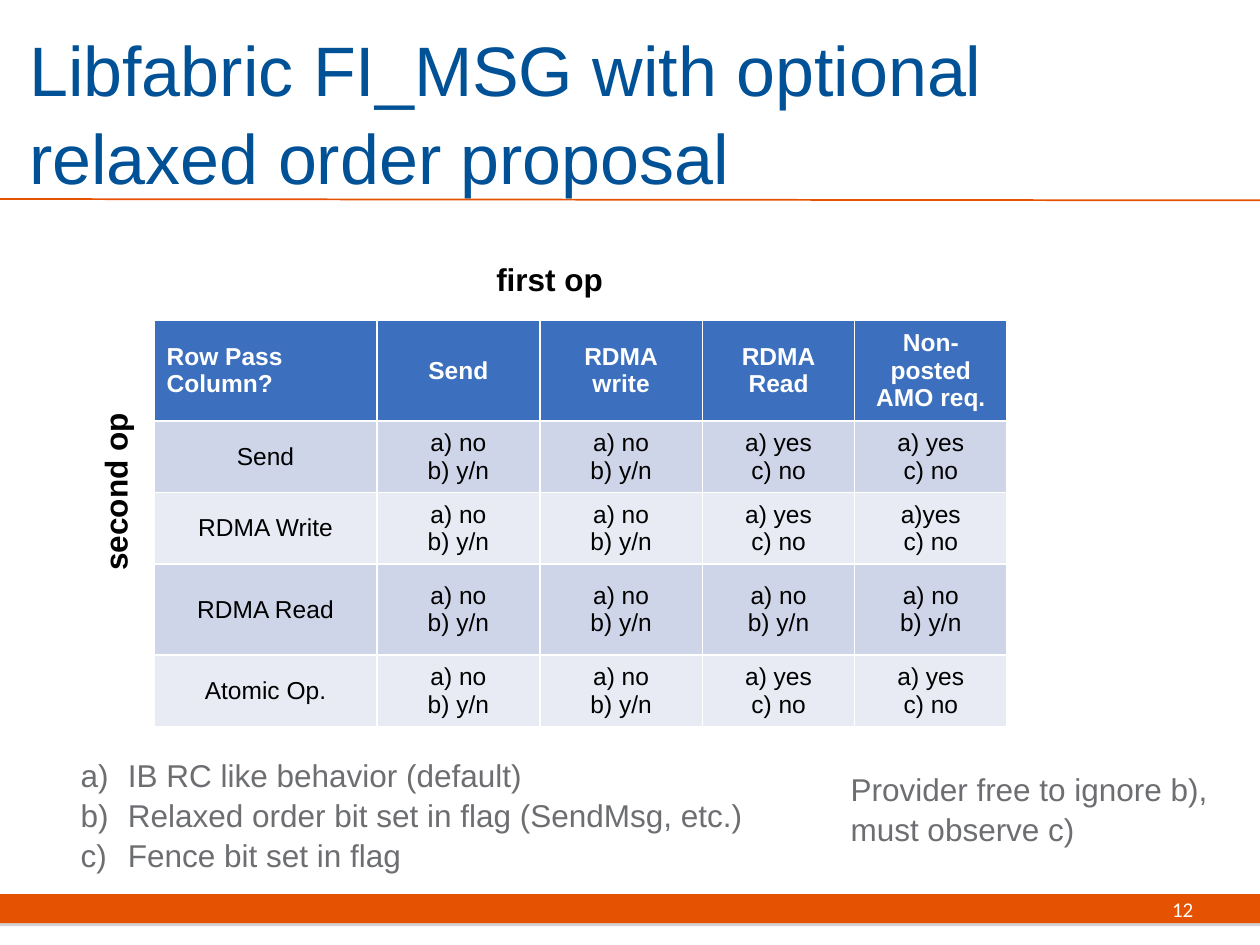
from dataclasses import dataclass

from lxml import etree
from pptx import Presentation
from pptx.dml.color import RGBColor
from pptx.enum.shapes import MSO_CONNECTOR, MSO_SHAPE
from pptx.enum.text import MSO_ANCHOR, MSO_AUTO_SIZE, PP_ALIGN
from pptx.oxml.ns import qn
from pptx.util import Pt

LEFT, CENTER, RIGHT = PP_ALIGN.LEFT, PP_ALIGN.CENTER, PP_ALIGN.RIGHT
TOP, MIDDLE = MSO_ANCHOR.TOP, MSO_ANCHOR.MIDDLE
NO_AUTOFIT = MSO_AUTO_SIZE.NONE
RECTANGLE, STRAIGHT = MSO_SHAPE.RECTANGLE, MSO_CONNECTOR.STRAIGHT
TITLE_ONLY = 5


@dataclass(frozen=True)
class Theme:
    accent: str = "E55302"
    title: str = "005195"
    body: str = "6D6E71"
    black: str = "000000"
    white: str = "FFFFFF"
    shadow: str = "808080"
    header: str = "3C6FBD"
    bands: tuple = ("CED5E8", "E8EBF4")
    font: str = "Arial"
    number_font: str = "Calibri"
    title_size: int = 40
    body_size: int = 18
    table_size: int = 14
    number_size: int = 12
    line_spacing: float = 1.05


THEME = Theme()
UNORDERED, FENCED = "a) no\nb) y/n", "a) yes\nc) no"
COLUMN_WIDTHS = (127.5, 93, 93, 87, 87)
ROW_HEIGHTS = (52, 37, 37, 52, 37)
ORDER_ROWS = (
    ("Row Pass Column?", "Send", "RDMA\nwrite", "RDMA\nRead", "Non-posted AMO req."),
    ("Send", UNORDERED, UNORDERED, FENCED, FENCED),
    ("RDMA Write", UNORDERED, UNORDERED, FENCED, "a)yes\nc) no"),
    ("RDMA Read", UNORDERED, UNORDERED, UNORDERED, UNORDERED),
    ("Atomic Op.", UNORDERED, UNORDERED, FENCED, FENCED),
)
BEHAVIORS = (
    "IB RC like behavior (default)",
    "Relaxed order bit set in flag (SendMsg, etc.)",
    "Fence bit set in flag",
)


def color(value):
    return RGBColor.from_string(value)


def points(box):
    return [Pt(length) for length in box]


def write(paragraph, text, size, ink, bold=False, align=LEFT, font=THEME.font):
    paragraph.alignment = align
    for index, line in enumerate(text.split("\n")):
        if index:
            paragraph.add_line_break()
        run = paragraph.add_run()
        run.text = line
        run.font.name = font
        run.font.size = Pt(size)
        run.font.bold = bold
        run.font.color.rgb = color(ink)


def add_letter(paragraph, indent):
    properties = paragraph._p.get_or_add_pPr()
    properties.set("marL", str(Pt(indent)))
    properties.set("indent", str(-Pt(indent)))
    etree.SubElement(properties, qn("a:buAutoNum"), type="alphaLcParenR")


def add_text(slide, box, lines, size=THEME.body_size, ink=THEME.body, bold=False,
             align=LEFT, font=THEME.font, anchor=TOP, indent=0):
    shape = slide.shapes.add_textbox(*points(box))
    frame = shape.text_frame
    frame.word_wrap = True
    frame.vertical_anchor = anchor
    for index, line in enumerate(lines):
        paragraph = frame.add_paragraph() if index else frame.paragraphs[0]
        if indent:
            add_letter(paragraph, indent)
        paragraph.line_spacing = THEME.line_spacing
        write(paragraph, line, size, ink, bold, align, font)
    return shape


def add_title(slide, box, text):
    title = slide.shapes.title
    title.left, title.top, title.width, title.height = points(box)
    frame = title.text_frame
    frame.word_wrap = True
    frame.auto_size = NO_AUTOFIT
    frame.vertical_anchor = MIDDLE
    paragraph = frame.paragraphs[0]
    paragraph.line_spacing = THEME.line_spacing
    write(paragraph, text, THEME.title_size, THEME.title)


def add_rule(slide, box):
    left, top, width, height = box
    ends = points((left, top, left + width, top + height))
    rule = slide.shapes.add_connector(STRAIGHT, *ends)
    rule.line.color.rgb = color(THEME.accent)
    rule.line.width = Pt(1)
    etree.SubElement(rule._element.spPr, qn("a:effectLst"))


def add_footer(slide, box, number):
    left, top, width, height = box
    bar = slide.shapes.add_shape(RECTANGLE, *points(box))
    bar.shadow.inherit = False
    bar.fill.solid()
    bar.fill.fore_color.rgb = color(THEME.accent)
    bar.line.fill.background()
    effects = bar._element.spPr.find(qn("a:effectLst"))
    shadow = etree.SubElement(effects, qn("a:outerShdw"), blurRad="0",
                              dist=str(Pt(1.8)), dir="5400000", rotWithShape="0")
    tint = etree.SubElement(shadow, qn("a:srgbClr"), val=THEME.shadow)
    etree.SubElement(tint, qn("a:alpha"), val="35000")
    number_box = (left + width - 116.5, top, 85.5, height)
    add_text(slide, number_box, [number], THEME.number_size, THEME.white,
             align=RIGHT, font=THEME.number_font, anchor=MIDDLE)


def add_order_table(slide, box):
    shape = slide.shapes.add_table(len(ORDER_ROWS), len(COLUMN_WIDTHS), *points(box))
    table = shape.table
    for column, width in zip(table.columns, COLUMN_WIDTHS):
        column.width = Pt(width)
    for row_index, (row, texts) in enumerate(zip(table.rows, ORDER_ROWS)):
        row.height = Pt(ROW_HEIGHTS[row_index])
        is_header = row_index == 0
        fill = THEME.header if is_header else THEME.bands[(row_index - 1) % 2]
        ink = THEME.white if is_header else THEME.black
        for column_index, (cell, text) in enumerate(zip(row.cells, texts)):
            cell.fill.solid()
            cell.fill.fore_color.rgb = color(fill)
            cell.vertical_anchor = MIDDLE
            align = LEFT if is_header and column_index == 0 else CENTER
            write(cell.text_frame.paragraphs[0], text, THEME.table_size, ink,
                  is_header, align)


def add_order_matrix(slide, box):
    left, top, width, height = box
    add_order_table(slide, box)
    add_text(slide, (left + 188.5, top - 39, 248, 29.5), ["first op"],
             ink=THEME.black, bold=True)
    side = add_text(slide, (left - 147, top + 11.5, 248, 29.5), ["second op"],
                    ink=THEME.black, bold=True)
    side.rotation = 270


def add_legend(slide, box):
    left, top, width, height = box
    add_text(slide, (left, top, 428.5, height), BEHAVIORS, indent=27)
    add_text(slide, (left + 440, top + 8, width - 440, 51),
             ["Provider free to ignore b),\nmust observe c)"])


def main():
    presentation = Presentation()
    presentation.slide_width, presentation.slide_height = Pt(720), Pt(540)
    slide = presentation.slides.add_slide(presentation.slide_layouts[TITLE_ONLY])
    add_footer(slide, (0, 511, 720, 16.5), "12")
    add_rule(slide, (0, 113.75, 720, 0.75))
    add_title(slide, (9.5, 18, 661.5, 90),
              "Libfabric FI_MSG with optional relaxed order proposal")
    add_order_matrix(slide, (88, 183, sum(COLUMN_WIDTHS), sum(ROW_HEIGHTS)))
    add_legend(slide, (39, 427.5, 681, 73))
    presentation.save("out.pptx")


if __name__ == "__main__":
    main()
